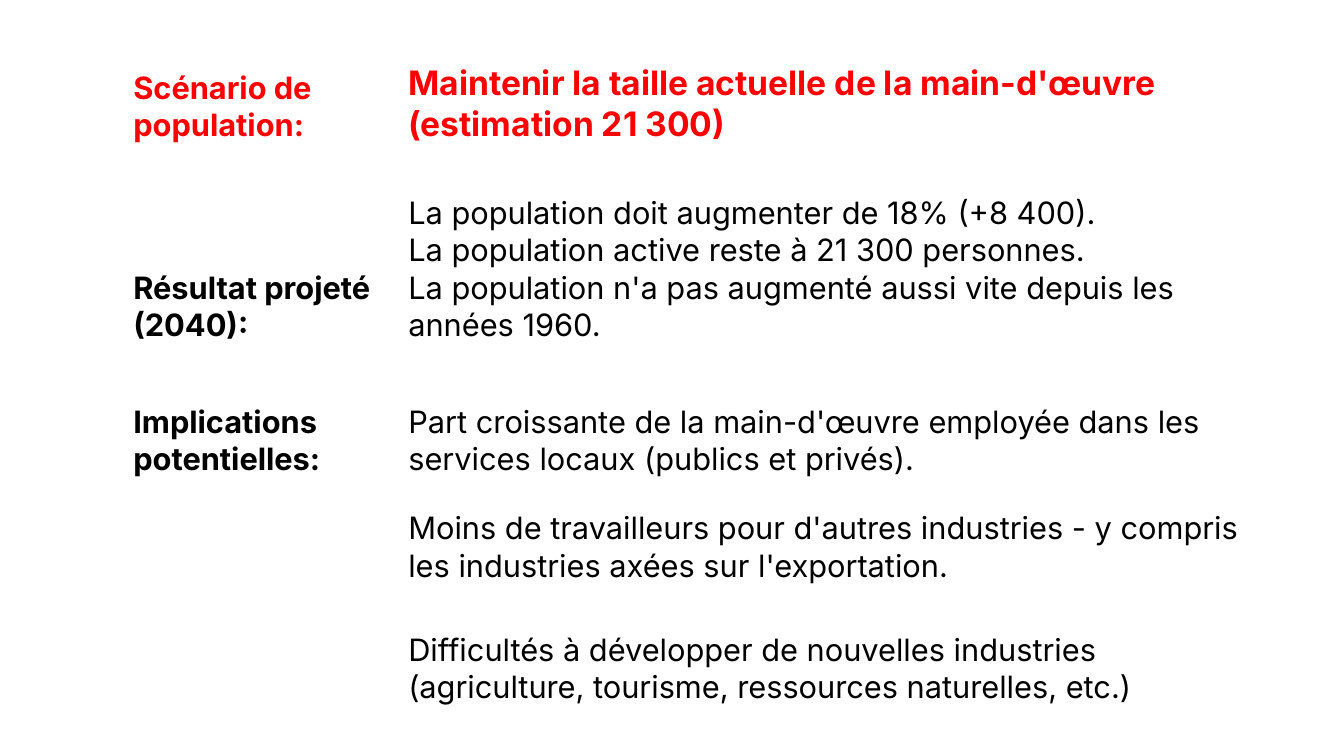
from lxml.etree import SubElement
from pptx import Presentation
from pptx.dml.color import RGBColor
from pptx.enum.text import MSO_ANCHOR as Anchor
from pptx.oxml.ns import qn
from pptx.util import Cm, Pt

RED = RGBColor(0xFF, 0x00, 0x00)
BLACK = RGBColor(0x00, 0x00, 0x00)
WHITE = RGBColor(0xFF, 0xFF, 0xFF)

COLUMN_WIDTHS = [6.93, 21.87]
ROW_HEIGHTS = [2.79, 5.03, 3.38, 2.69, 3.05]
SCENARIO_ROWS = [
    ("Scénario de population:",
     ["Maintenir la taille actuelle de la main-d'œuvre (estimation 21 300)"]),
    ("Résultat projeté (2040):",
     ["La population doit augmenter de 18% (+8 400).",
      "La population active reste à 21 300 personnes.",
      "La population n'a pas augmenté aussi vite depuis les années 1960."]),
    ("Implications potentielles:",
     ["Part croissante de la main-d'œuvre employée dans les services locaux "
      "(publics et privés)."]),
    ("",
     ["Moins de travailleurs pour d'autres industries - y compris les "
      "industries axées sur l'exportation."]),
    ("",
     ["Difficultés à développer de nouvelles industries (agriculture, "
      "tourisme, ressources naturelles, etc.)"]),
]


class ScenarioPage:
    font_name = "Inter"
    border_width = Pt(1)
    cell_margin = Cm(0.03)

    def __init__(self, deck):
        self.page = deck.slides.add_slide(deck.slide_layouts[6])

    def add_table(self, left, top, widths, heights):
        frame = self.page.shapes.add_table(
            len(heights), len(widths), Cm(left), Cm(top),
            Cm(sum(widths)), Cm(sum(heights)))
        table = frame.table
        table.first_row = table.horz_banding = False
        for column, width in zip(table.columns, widths):
            column.width = Cm(width)
        for row, height in zip(table.rows, heights):
            row.height = Cm(height)
        for cell in table.iter_cells():
            self.style_cell(cell)
        return table

    def style_cell(self, cell):
        properties = cell._tc.get_or_add_tcPr()
        for side in ("lnL", "lnR", "lnT", "lnB"):
            line = SubElement(properties, qn(f"a:{side}"), w=str(self.border_width))
            fill = SubElement(line, qn("a:solidFill"))
            SubElement(fill, qn("a:srgbClr"), val=str(WHITE))
        cell.fill.background()
        cell.vertical_anchor = Anchor.BOTTOM
        cell.margin_left = cell.margin_right = cell.margin_top = self.cell_margin
        cell.margin_bottom = 0

    def write_cell(self, cell, lines, size=22, color=BLACK, bold=False):
        cell.text = "\n".join(lines)
        for para in cell.text_frame.paragraphs:
            para.font.name = self.font_name
            para.font.size = Pt(size)
            para.font.bold = bold
            para.font.color.rgb = color


def main():
    deck = Presentation()
    deck.slide_width, deck.slide_height = Cm(33.87), Cm(19.05)
    scenario = ScenarioPage(deck)
    table = scenario.add_table(3.33, 0.84, COLUMN_WIDTHS, ROW_HEIGHTS)
    for index, (label, lines) in enumerate(SCENARIO_ROWS):
        heading = index == 0
        color = RED if heading else BLACK
        scenario.write_cell(table.cell(index, 0), [label], color=color, bold=True)
        scenario.write_cell(table.cell(index, 1), lines, 24 if heading else 22,
                            color, heading)
    deck.save("out.pptx")


if __name__ == "__main__":
    main()
